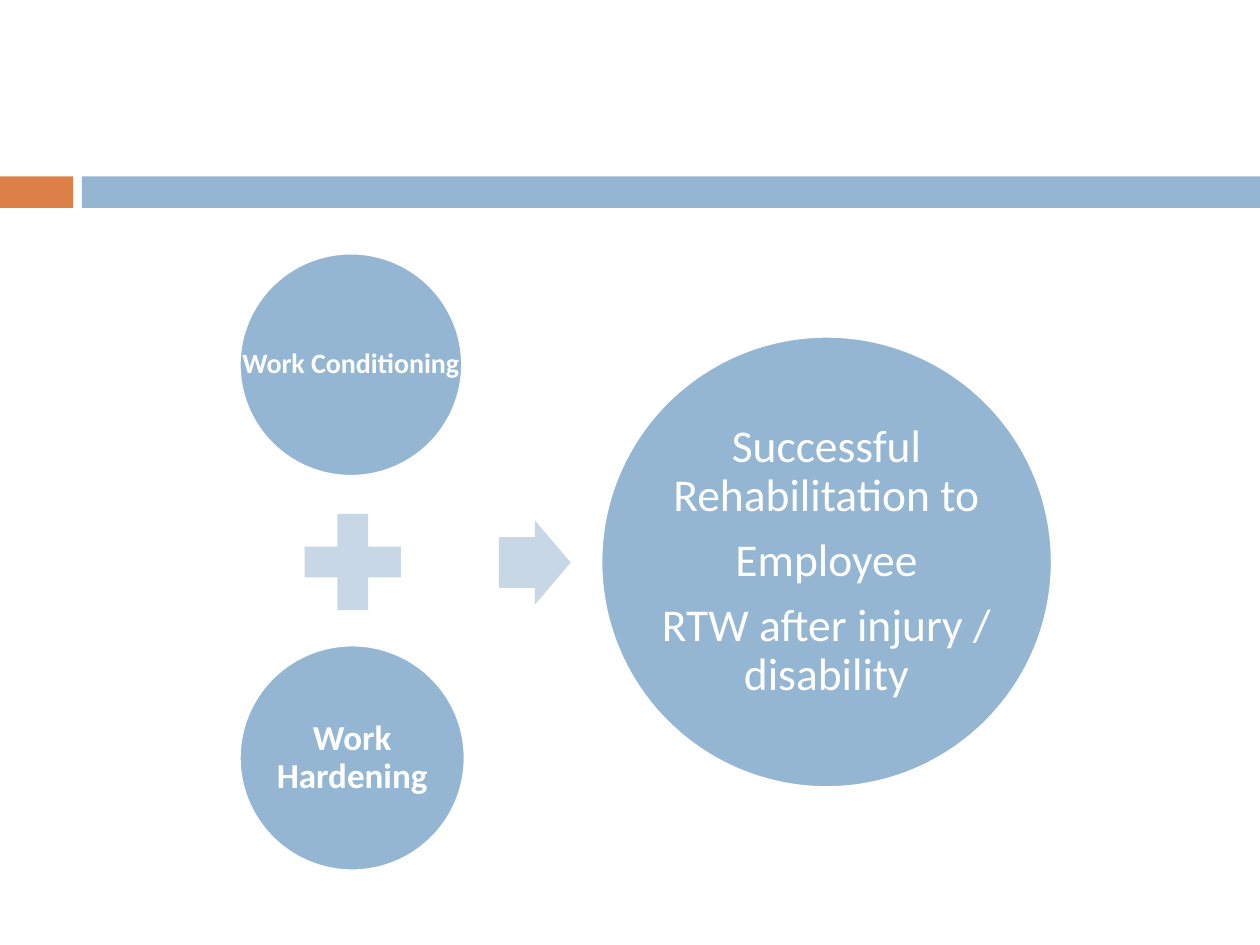
from pptx import Presentation
from pptx.dml.color import RGBColor
from pptx.enum import shapes, text
from pptx.util import Inches, Pt

BLUE = RGBColor(0x94, 0xB6, 0xD2)
PALE = RGBColor(0xC8, 0xD7, 0xE5)
ORANGE = RGBColor(0xDD, 0x80, 0x47)
WHITE = RGBColor(0xFF, 0xFF, 0xFF)
KIND = shapes.MSO_SHAPE


class Deck:
    """Hold the style and current slide, and draw each kind of element."""

    def __init__(self):
        self.prs = Presentation()
        self.prs.slide_width, self.prs.slide_height = Inches(10), Inches(7.5)
        self.slide = self.prs.slides.add_slide(self.prs.slide_layouts[6])
        self.font = "Calibri"

    def shape(self, kind, left, top, width, height, fill):
        item = self.slide.shapes.add_shape(
            kind, Inches(left), Inches(top), Inches(width), Inches(height))
        item.shadow.inherit = False
        item.fill.solid()
        item.fill.fore_color.rgb = fill
        item.line.fill.background()
        return item

    def circle(self, left, top, side, words, size, bold=False, inset=0.02):
        disc = self.shape(KIND.OVAL, left, top, side, side, BLUE)
        disc.line.color.rgb = WHITE
        disc.line.width = Pt(1.5)
        self.label(left, top, side, words, size, bold, inset)

    def label(self, left, top, side, words, size, bold, inset):
        box = self.slide.shapes.add_textbox(
            Inches(left), Inches(top), Inches(side), Inches(side))
        frame = box.text_frame
        frame.word_wrap = True
        frame.vertical_anchor = text.MSO_ANCHOR.MIDDLE
        frame.margin_left = frame.margin_right = Inches(inset)
        frame.margin_top = frame.margin_bottom = Inches(inset)
        frame.text = words
        for para in frame.paragraphs:
            para.alignment = text.PP_ALIGN.CENTER
            para.line_spacing = 0.9
            para.space_after = Pt(round(size * 0.35, 1))
            for run in para.runs:
                run.font.name = self.font
                run.font.size = Pt(size)
                run.font.bold = bold
                run.font.color.rgb = WHITE

    def save(self):
        self.prs.save("out.pptx")


def main():
    deck = Deck()
    deck.shape(KIND.RECTANGLE, 0, 1.4, 0.58, 0.25, ORANGE)
    deck.shape(KIND.RECTANGLE, 0.65, 1.4, 9.35, 0.25, BLUE)

    deck.circle(1.9, 2.01, 1.77, "Work Conditioning", 16, True, 0.01)
    deck.shape(KIND.MATH_PLUS, 2.28, 3.94, 1.04, 1.04, PALE)
    deck.circle(1.9, 5.12, 1.79, "Work Hardening", 20, True, 0.03)

    arrow = deck.shape(KIND.RIGHT_ARROW, 3.96, 4.13, 0.57, 0.67, PALE)
    arrow.adjustments[0] = 0.6
    goal = "Successful Rehabilitation to\nEmployee\nRTW after injury / disability"
    deck.circle(4.77, 2.67, 3.58, goal, 26, inset=0.04)
    deck.save()


if __name__ == "__main__":
    main()
